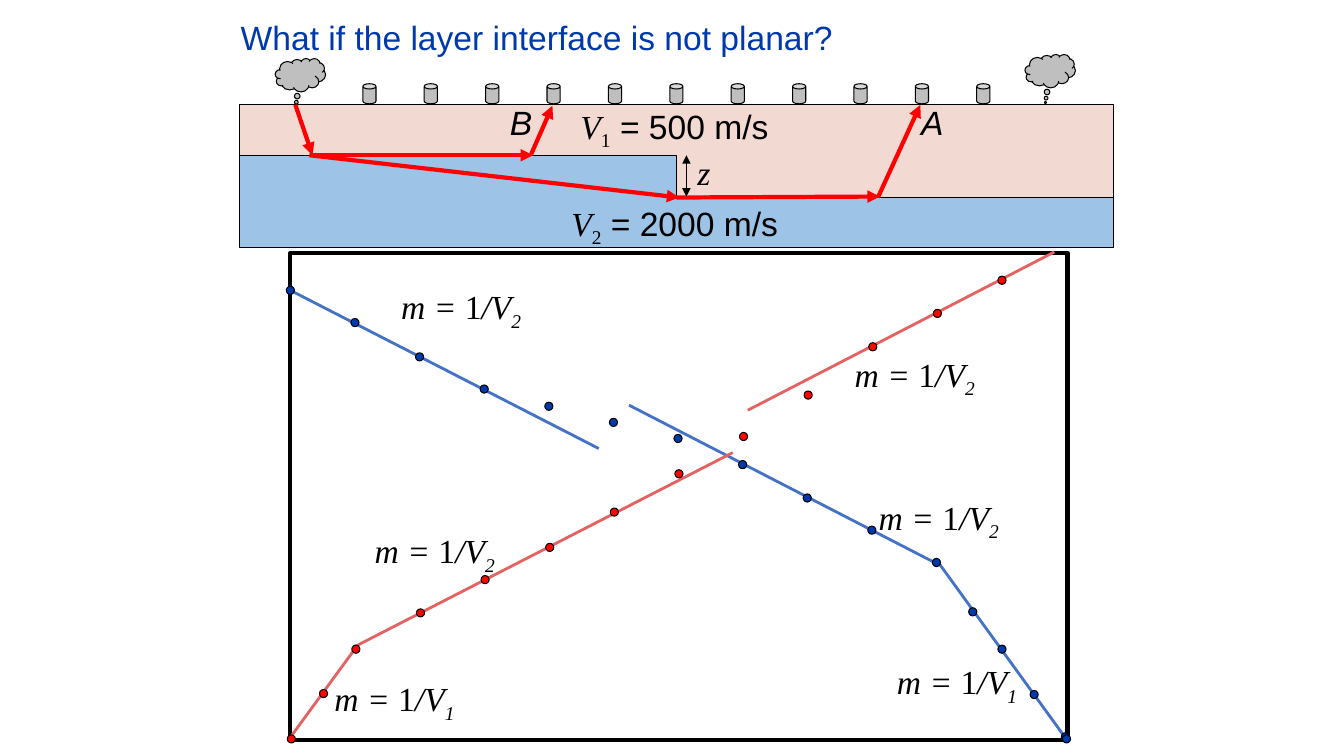
from lxml import etree
from pptx import Presentation
from pptx.dml.color import RGBColor
from pptx.enum.shapes import MSO_CONNECTOR, MSO_SHAPE
from pptx.enum.text import MSO_AUTO_SIZE
from pptx.oxml.ns import qn
from pptx.util import Pt

RECTANGLE = MSO_SHAPE.RECTANGLE
CLOUD = MSO_SHAPE.CLOUD_CALLOUT
CAN = MSO_SHAPE.CAN
OVAL = MSO_SHAPE.OVAL
STRAIGHT = MSO_CONNECTOR.STRAIGHT
FIT_SHAPE = MSO_AUTO_SIZE.SHAPE_TO_FIT_TEXT

THEME = {
    "ink": RGBColor.from_string("000000"),
    "title": RGBColor.from_string("0039AC"),
    "device": RGBColor.from_string("BFBFBF"),
    "upper": RGBColor.from_string("F2D9D2"),
    "lower": RGBColor.from_string("9DC3E6"),
    "ray": RGBColor.from_string("FF0000"),
    "forward": RGBColor.from_string("FF0501"),
    "reverse": RGBColor.from_string("0039AC"),
    "forward_fit": RGBColor.from_string("E36262"),
    "reverse_fit": RGBColor.from_string("4472C4"),
    "sans": "Arial",
    "serif": "Times New Roman",
    "size": Pt(24),
    "thin": Pt(0.75),
    "fit": Pt(2),
    "thick": Pt(3),
}

prs = Presentation()
prs.slide_width = Pt(960)
prs.slide_height = Pt(540)
slide = prs.slides.add_slide(prs.slide_layouts[6])
shapes = slide.shapes


def paint(shape, fill=None, weight="thin"):
    shape.shadow.inherit = False
    if fill:
        shape.fill.solid()
        shape.fill.fore_color.rgb = THEME[fill]
    else:
        shape.fill.background()
    shape.line.color.rgb = THEME["ink"]
    shape.line.width = THEME[weight]
    return shape


def write_text(*pieces, left, top, width, color="ink"):
    frame = shapes.add_textbox(Pt(left), Pt(top), Pt(width), Pt(36)).text_frame
    frame.word_wrap = False
    frame.auto_size = FIT_SHAPE
    for text, face, style in pieces:
        run = frame.paragraphs[0].add_run()
        run.text = text
        run.font.name = THEME[face]
        run.font.size = THEME["size"]
        run.font.italic = "italic" in style
        run.font.color.rgb = THEME[color]
        if "sub" in style:
            run.font._element.set("baseline", "-25000")


for left, top in [(196.6, 41.8), (732.2, 38.9)]:
    blast = paint(shapes.add_shape(CLOUD, Pt(left), Pt(top), Pt(36), Pt(23.8)), "device")
    blast.adjustments[0] = -0.094
    blast.adjustments[1] = 0.943

for index in range(11):
    geophone = shapes.add_shape(CAN, Pt(259.2 + 43.85 * index), Pt(59.8), Pt(9.4), Pt(14.4))
    geophone.adjustments[0] = 0.404
    paint(geophone, "device")

paint(shapes.add_shape(RECTANGLE, Pt(171.4), Pt(74.9), Pt(624.2), Pt(66.2)), "upper")
interface = shapes.build_freeform(Pt(171.4), Pt(110.9))
interface.add_line_segments([(Pt(x), Pt(y)) for x, y in [
    (483.1, 110.9), (483.1, 141.1), (795.2, 141.1), (795.2, 177.1), (171.4, 177.1),
]])
paint(interface.convert_to_shape(), "lower")
paint(shapes.add_shape(RECTANGLE, Pt(207.4), Pt(180.7), Pt(555.1), Pt(347.8)), weight="thick")

rays = [
    (211, 74.9, 223.2, 110.9),
    (221.8, 110.9, 380.9, 110.9),
    (379.4, 110.2, 394.6, 75.6),
    (221, 110.9, 485.3, 141.1),
    (483.1, 141.1, 628.6, 140.4),
    (627.1, 141.1, 657.4, 74.9),
]
step_height = [(490.3, 110.9, 490.3, 140.4)]
reverse_fits = [
    (761, 527, 668.2, 398.9),
    (670.3, 403.2, 449.3, 289.4),
    (427.7, 320.4, 207.4, 207.4),
]
forward_fits = [
    (206.6, 527.8, 253.4, 463.7),
    (254.2, 461.5, 523.4, 323.3),
    (534.2, 293, 753.1, 180),
]
for color, weight, ends, segments in [
    ("ray", "thick", ["tailEnd"], rays),
    ("ink", "thin", ["headEnd", "tailEnd"], step_height),
    ("reverse_fit", "fit", [], reverse_fits),
    ("forward_fit", "fit", [], forward_fits),
]:
    for segment in segments:
        path_line = shapes.add_connector(STRAIGHT, *[Pt(value) for value in segment])
        path_line.line.color.rgb = THEME[color]
        path_line.line.width = THEME[weight]
        for end in ends:
            etree.SubElement(path_line.line._ln, qn(f"a:{end}"), type="triangle")
        etree.SubElement(path_line._element.spPr, qn("a:effectLst"))

forward_times = [463.7, 437.8, 414, 391, 365.8, 338.4, 311.8, 282.2, 247.7, 223.9, 200.2]
reverse_times = [207.4, 230.4, 254.9, 277.9, 290.2, 301.7, 313.2, 331.9, 355.7, 378.7, 401.8]
forward_direct = [(208.1, 527.8), (231.1, 495.4)]
reverse_direct = [(694.8, 437), (715.7, 463.7), (738.7, 496.1), (761, 526.3), (761.8, 527.8)]
for color, start, times, direct in [
    ("forward", 254.2, forward_times, forward_direct),
    ("reverse", 207.4, reverse_times, reverse_direct),
]:
    refracted = [(start + 46.15 * index, time) for index, time in enumerate(times)]
    for x, y in direct + refracted:
        paint(shapes.add_shape(OVAL, Pt(x - 2.9), Pt(y - 2.9), Pt(5.8), Pt(5.8)), color)

write_text(("What if the layer interface is not planar?", "sans", ""),
           left=164.9, top=8.6, width=441.4, color="title")

for layer, speed, left, top, width in [
    ("1", " = 500 m/s", 407.5, 72, 149.8),
    ("2", " = 2000 m/s", 401, 141.1, 163.4),
]:
    write_text(("V", "serif", "italic"), (layer, "serif", "sub"), (speed, "sans", ""),
               left=left, top=top, width=width)

for mark, face, left, top, width in [
    ("z", "serif", 491, 105.1, 23.8),
    ("A", "sans", 650.9, 69.1, 30.2),
    ("B", "sans", 357.1, 69.1, 30.2),
]:
    write_text((mark, face, "italic"), left=left, top=top, width=width)

for layer, left, top in [
    ("2", 279.4, 200.9),
    ("2", 260.6, 375.1),
    ("2", 603.4, 249.1),
    ("2", 620.6, 351.4),
    ("1", 633.6, 468.7),
    ("1", 231.8, 481),
]:
    write_text(("m = ", "serif", "italic"), ("1", "serif", ""), ("/V", "serif", "italic"),
               (layer, "serif", "italic sub"), left=left, top=top, width=101.5)

prs.save("out.pptx")
